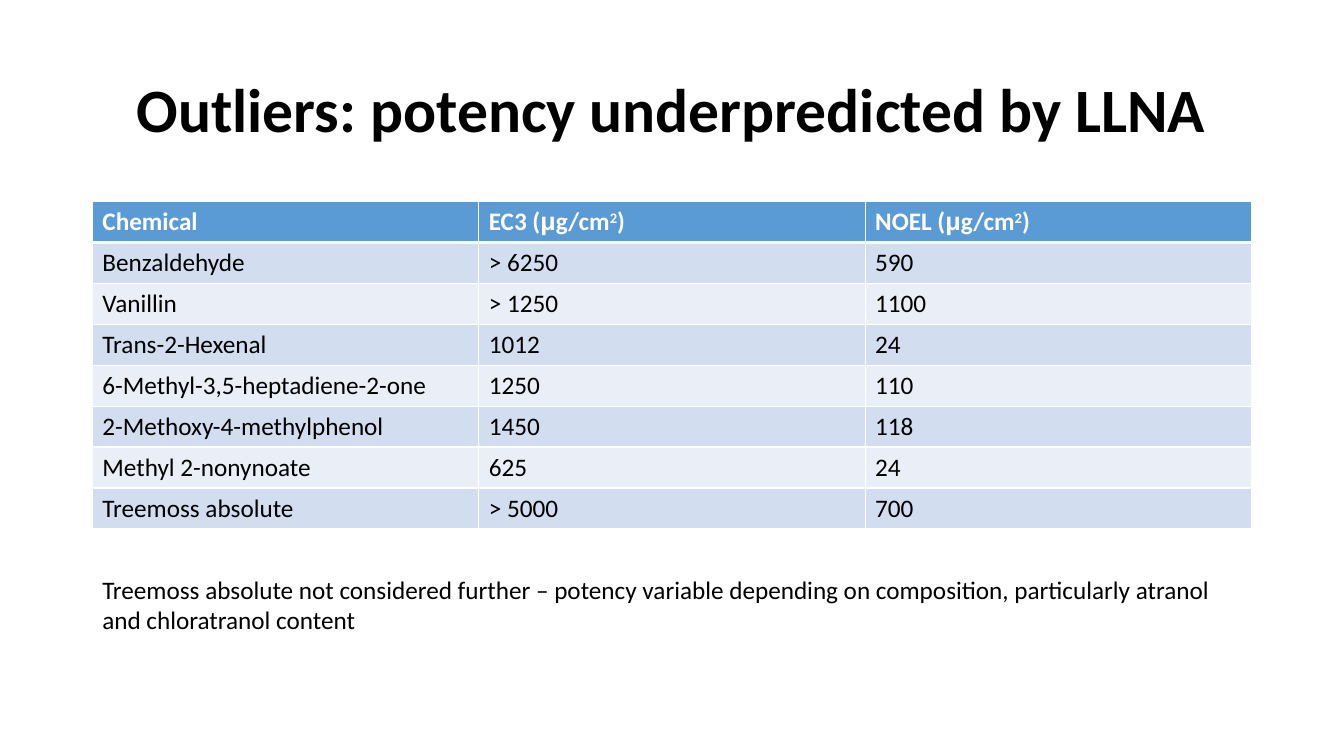
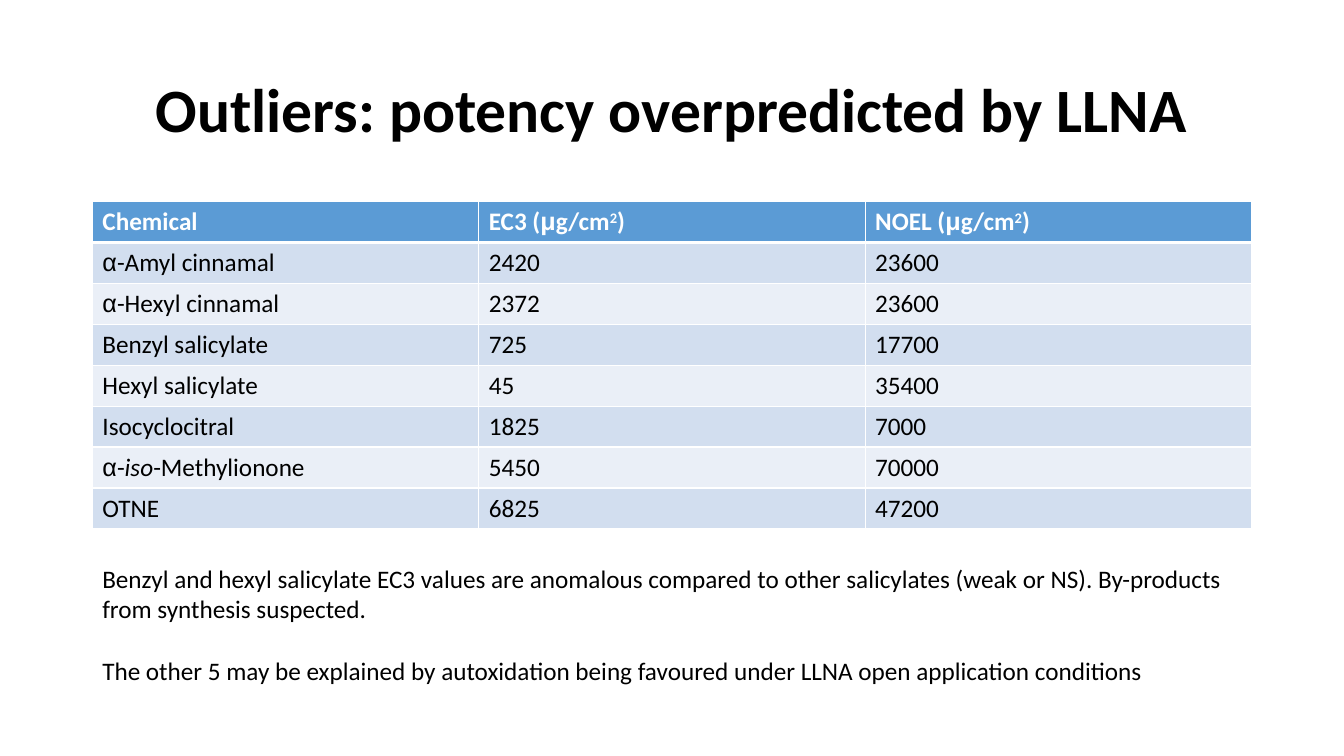
"""Build two slides listing the chemicals whose potency the LLNA mispredicts."""
import pptx
import pptx.dml.color
import pptx.enum.text
import pptx.oxml
import pptx.oxml.ns
import pptx.util

PX = 9525
LEFT, WIDTH = 88, 1104
TABLE_TOP, ROW_HEIGHT = 192, 39
BLACK = pptx.dml.color.RGBColor(0x00, 0x00, 0x00)
WHITE = pptx.dml.color.RGBColor(0xFF, 0xFF, 0xFF)
HEADER_BLUE = pptx.dml.color.RGBColor(0x5B, 0x9B, 0xD5)
BANDS = [
    pptx.dml.color.RGBColor(0xEA, 0xEF, 0xF7),
    pptx.dml.color.RGBColor(0xD2, 0xDE, 0xEF),
]

UNIT = [("μ", "symbol"), ("g/cm", ""), ("2", "super"), (")", "")]
HEADER = ["Chemical", [("EC3 (", ""), *UNIT], [("NOEL (", ""), *UNIT]]
ALPHA = ("α", "symbol")

SLIDES = [
    {
        "title": "Outliers: potency underpredicted by LLNA",
        "rows": [
            ["Benzaldehyde", "> 6250", "590"],
            ["Vanillin", "> 1250", "1100"],
            ["Trans-2-Hexenal", "1012", "24"],
            ["6-Methyl-3,5-heptadiene-2-one", "1250", "110"],
            ["2-Methoxy-4-methylphenol", "1450", "118"],
            ["Methyl 2-nonynoate", "625", "24"],
            ["Treemoss absolute", "> 5000", "700"],
        ],
        "note_box": (542, 68),
        "notes": [
            "Treemoss absolute not considered further – potency variable depending "
            "on composition, particularly atranol and chloratranol content",
        ],
    },
    {
        "title": "Outliers: potency overpredicted by LLNA",
        "rows": [
            [[ALPHA, ("-Amyl cinnamal", "")], "2420", "23600"],
            [[ALPHA, ("-Hexyl cinnamal", "")], "2372", "23600"],
            ["Benzyl salicylate", "725", "17700"],
            ["Hexyl salicylate", "45", "35400"],
            ["Isocyclocitral", "1825", "7000"],
            [[ALPHA, ("-", ""), ("iso", "italic"), ("-Methylionone", "")], "5450", "70000"],
            ["OTNE", "6825", "47200"],
        ],
        "note_box": (532, 126),
        "notes": [
            "Benzyl and hexyl salicylate EC3 values are anomalous compared to other "
            "salicylates (weak or NS). By-products from synthesis suspected.",
            "The other 5 may be explained by autoxidation being favoured under LLNA "
            "open application conditions",
        ],
    },
]


def write(p, text, size=18, color=BLACK, bold=False):
    """Fill a paragraph with a string or with (text, style) runs."""
    p.font.name = "Calibri"
    p.font.size = pptx.util.Pt(size)
    p.font.bold = bold
    p.font.color.rgb = color
    for part, style in [(text, "")] if isinstance(text, str) else text:
        r = p.add_run()
        r.text = part
        if style == "symbol":
            r.font.name = "Arial"
        elif style == "italic":
            r.font.italic = True
        elif style == "super":
            r._r.get_or_add_rPr().set("baseline", "30000")


def add_border(cell, side, points):
    """Draw one white edge of a table cell."""
    cell._tc.get_or_add_tcPr().append(pptx.oxml.parse_xml(
        f'<a:ln{side} {pptx.oxml.ns.nsdecls("a")} w="{pptx.util.Pt(points)}">'
        f'<a:solidFill><a:srgbClr val="{WHITE}"/></a:solidFill></a:ln{side}>'))


prs = pptx.Presentation()
prs.slide_width, prs.slide_height = 1280 * PX, 720 * PX

for content in SLIDES:
    s = prs.slides.add_slide(prs.slide_layouts[6])

    tf = s.shapes.add_textbox(LEFT * PX, 38 * PX, WIDTH * PX, 139 * PX).text_frame
    tf.word_wrap = True
    tf.vertical_anchor = pptx.enum.text.MSO_ANCHOR.MIDDLE
    p = tf.paragraphs[0]
    p.alignment = pptx.enum.text.PP_ALIGN.CENTER
    p.line_spacing = 0.9
    write(p, content["title"], size=44, bold=True)

    rows = [HEADER, *content["rows"]]
    table = s.shapes.add_table(
        len(rows), len(HEADER), LEFT * PX, TABLE_TOP * PX,
        WIDTH * PX, len(rows) * ROW_HEIGHT * PX).table
    for i, row in enumerate(rows):
        is_header = i == 0
        for j, text in enumerate(row):
            cell = table.cell(i, j)
            add_border(cell, "L", 1)
            add_border(cell, "R", 1)
            add_border(cell, "T", 3 if i == 1 else 1)
            add_border(cell, "B", 3 if is_header else 1)
            cell.fill.solid()
            cell.fill.fore_color.rgb = HEADER_BLUE if is_header else BANDS[i % 2]
            write(cell.text_frame.paragraphs[0], text,
                  color=WHITE if is_header else BLACK, bold=is_header)

    top, height = content["note_box"]
    tf = s.shapes.add_textbox(LEFT * PX, top * PX, WIDTH * PX, height * PX).text_frame
    tf.word_wrap = True
    for i, note in enumerate(content["notes"]):
        p = tf.add_paragraph() if i else tf.paragraphs[0]
        if i:
            p.space_before = pptx.util.Pt(22)
        write(p, note)

prs.save("out.pptx")
